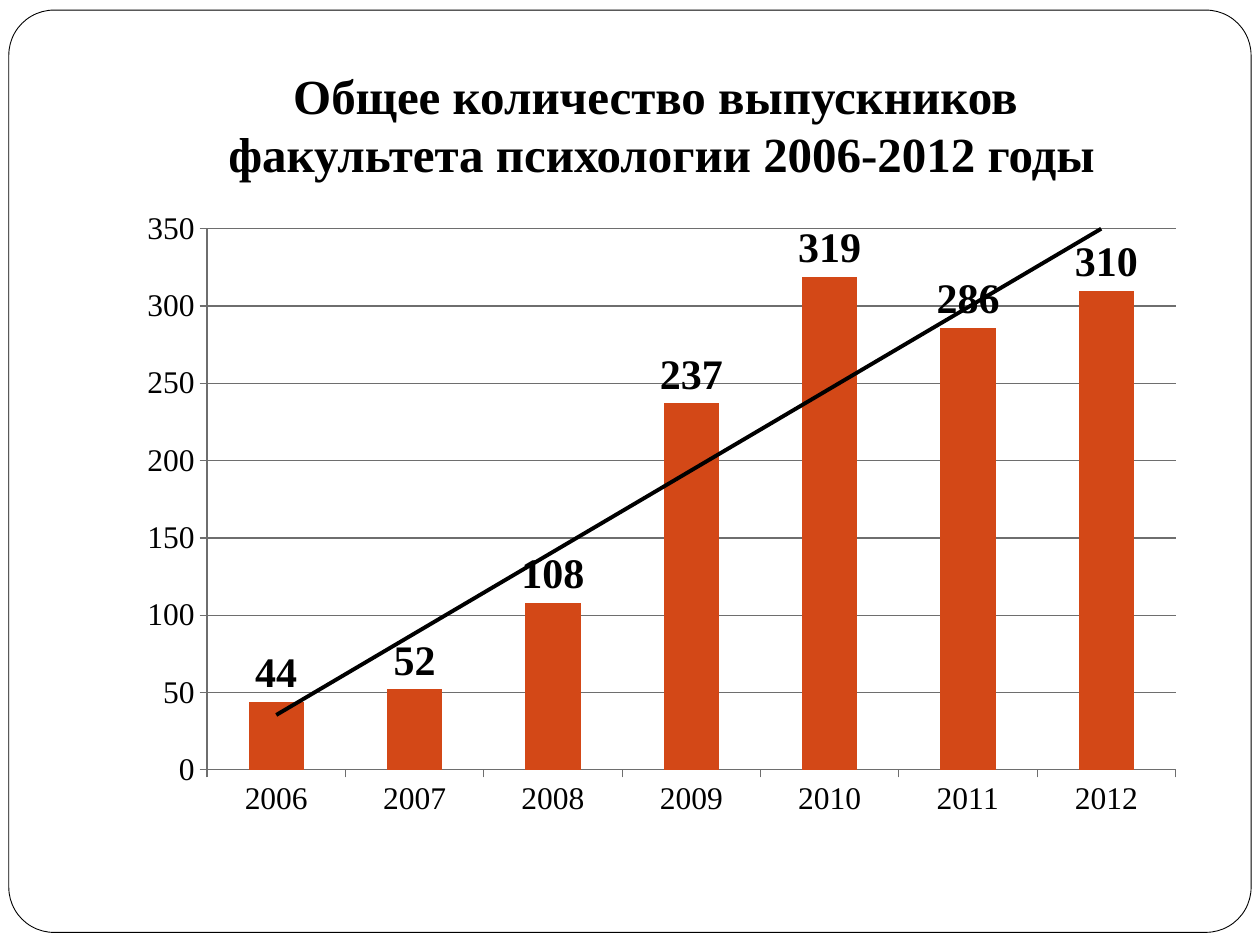
import pptx
import pptx.chart.data
import pptx.dml.color
import pptx.enum.chart
import pptx.enum.shapes
import pptx.enum.text
import pptx.oxml
import pptx.oxml.ns
import pptx.util
from pptx.util import Inches

FONT = "Times New Roman"
COLORS = {"paper": "FFFFFF", "ink": "000000", "bar": "D34817", "grid": "6E6E6E"}
GRADUATES = {"2006": 44, "2007": 52, "2008": 108, "2009": 237,
             "2010": 319, "2011": 286, "2012": 310}


def color(name):
    return pptx.dml.color.RGBColor.from_string(COLORS[name])


def style_font(font, size, bold=False):
    font.name = FONT
    font.size = pptx.util.Pt(size)
    font.bold = bold
    font.color.rgb = color("ink")


def style_line(line, name, width):
    line.color.rgb = color(name)
    line.width = pptx.util.Pt(width)


def add_frame(slide):
    frame = slide.shapes.add_shape(
        pptx.enum.shapes.MSO_SHAPE.ROUNDED_RECTANGLE,
        Inches(0.07), Inches(0.08), Inches(9.86), Inches(7.32))
    frame.adjustments[0] = 0.049
    frame.shadow.inherit = False
    frame.fill.solid()
    frame.fill.fore_color.rgb = color("paper")
    style_line(frame.line, "ink", 0.5)


def add_title(slide, text):
    title = slide.shapes.add_textbox(Inches(1), Inches(0.3), Inches(8.5), Inches(1.25))
    text_frame = title.text_frame
    text_frame.word_wrap = True
    text_frame.vertical_anchor = pptx.enum.text.MSO_ANCHOR.BOTTOM
    text_frame.margin_bottom = Inches(0.1)
    text_frame.text = text
    paragraph = text_frame.paragraphs[0]
    paragraph.alignment = pptx.enum.text.PP_ALIGN.CENTER
    for run in paragraph.runs:
        style_font(run.font, 28, True)


def add_trend_line(series):
    trend_line = pptx.oxml.parse_xml(
        f'<c:trendline {pptx.oxml.ns.nsdecls("c", "a")}>'
        f'<c:spPr><a:ln w="{pptx.util.Pt(2.25)}"><a:solidFill>'
        f'<a:srgbClr val="{COLORS["ink"]}"/></a:solidFill></a:ln></c:spPr>'
        '<c:trendlineType val="linear"/><c:dispRSqr val="0"/><c:dispEq val="0"/>'
        '</c:trendline>')
    series._element.find(pptx.oxml.ns.qn("c:cat")).addprevious(trend_line)


def style_axis(axis):
    axis.major_tick_mark = pptx.enum.chart.XL_TICK_MARK.OUTSIDE
    axis.minor_tick_mark = pptx.enum.chart.XL_TICK_MARK.NONE
    style_line(axis.format.line, "grid", 0.75)


def add_graduates_chart(slide):
    data = pptx.chart.data.CategoryChartData()
    data.categories = list(GRADUATES)
    data.add_series("Series 1", list(GRADUATES.values()))
    chart = slide.shapes.add_chart(
        pptx.enum.chart.XL_CHART_TYPE.COLUMN_CLUSTERED,
        Inches(1), Inches(1.58), Inches(8.5), Inches(5), data).chart
    chart.has_title = False
    chart.has_legend = False
    style_font(chart.font, 18)

    style_axis(chart.category_axis)
    style_axis(chart.value_axis)
    chart.value_axis.minimum_scale = 0
    chart.value_axis.maximum_scale = 350
    chart.value_axis.major_unit = 50
    style_line(chart.value_axis.major_gridlines.format.line, "grid", 0.75)

    plot = chart.plots[0]
    plot.gap_width = 150
    plot.vary_by_categories = False
    series = plot.series[0]
    series.format.fill.solid()
    series.format.fill.fore_color.rgb = color("bar")
    labels = series.data_labels
    labels.show_value = True
    labels.position = pptx.enum.chart.XL_LABEL_POSITION.OUTSIDE_END
    style_font(labels.font, 24, True)
    add_trend_line(series)


def main():
    presentation = pptx.Presentation()
    presentation.slide_width = Inches(10)
    presentation.slide_height = Inches(7.5)
    slide = presentation.slides.add_slide(presentation.slide_layouts[6])
    add_frame(slide)
    add_title(slide, "Общее количество выпускников \vфакультета психологии 2006-2012 годы")
    add_graduates_chart(slide)
    presentation.save("out.pptx")


if __name__ == "__main__":
    main()
